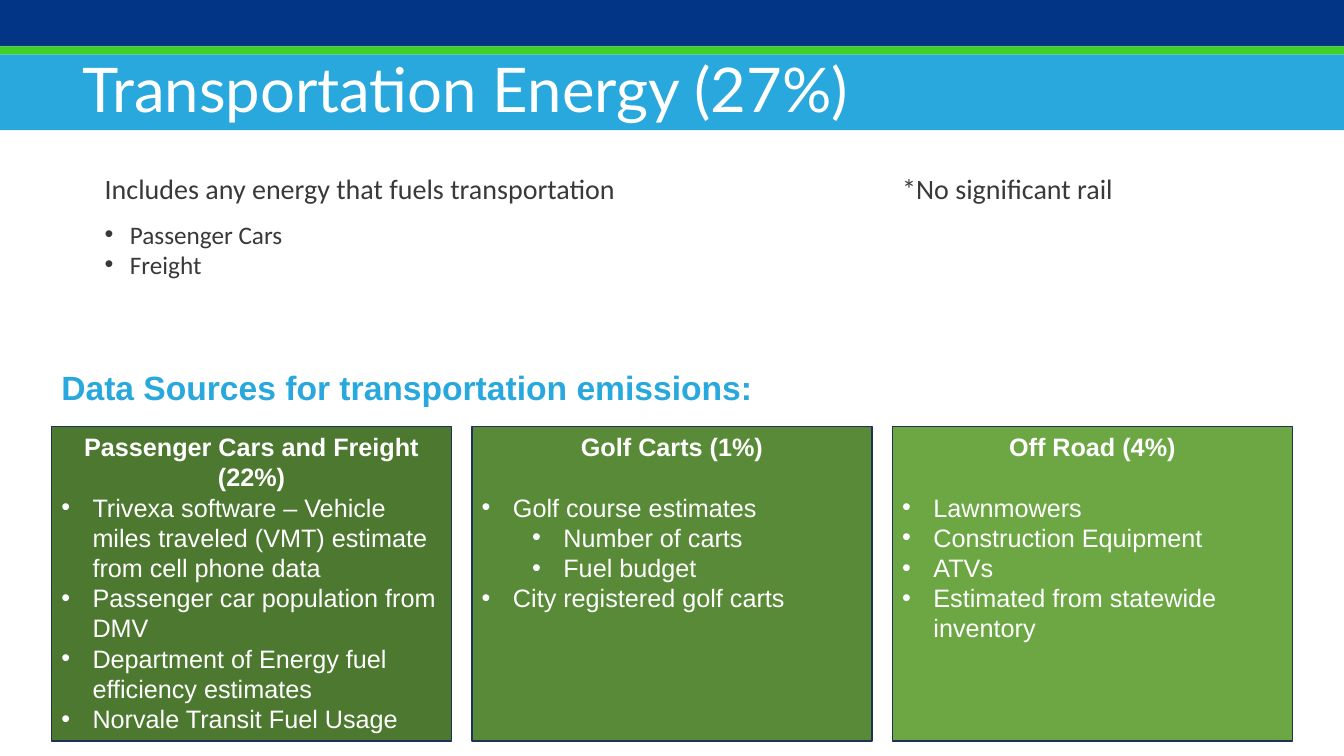
from dataclasses import dataclass

from lxml import etree
from pptx import Presentation
from pptx import util as u
from pptx.dml import color
from pptx.enum import shapes, text
from pptx.oxml import ns

HUES = {
    "navy": "023586", "lime": "3ED128", "sky": "28A8DD", "edge": "1E3256",
    "moss": "4C782F", "fern": "598A37", "leaf": "6CA744",
    "ink": "3B3838", "white": "FFFFFF",
}


@dataclass
class Line:
    words: str
    size: float = 18
    font: str = "Arial"
    hue: str = "white"
    bold: bool = False
    level: int = 0
    indent: float = 0
    center: bool = False
    before: float = 0
    after: float = 0


@dataclass
class Box:
    left: float
    top: float
    width: float
    height: float


@dataclass
class Card:
    hue: str
    title: str
    gap: float
    items: list[tuple[int, str]]


def tint(name: str) -> color.RGBColor:
    return color.RGBColor.from_string(HUES[name])


def place(box: Box) -> list[u.Length]:
    return [u.Inches(n) for n in (box.left, box.top, box.width, box.height)]


def write(frame, lines: list[Line]) -> None:
    frame.word_wrap = True
    frame.vertical_anchor = text.MSO_ANCHOR.TOP
    for i, line in enumerate(lines):
        para = frame.add_paragraph() if i else frame.paragraphs[0]
        para.text = line.words
        para.level = line.level
        para.alignment = text.PP_ALIGN.CENTER if line.center else text.PP_ALIGN.LEFT
        para.space_before = u.Pt(line.before)
        para.space_after = u.Pt(line.after)
        font = para.font
        font.size, font.name, font.bold = u.Pt(line.size), line.font, line.bold
        font.color.rgb = tint(line.hue)
        if line.indent:
            props = para._p.get_or_add_pPr()
            props.set("marL", str(u.Inches(line.indent + line.level * 0.5)))
            props.set("indent", str(-u.Inches(line.indent)))
            face = etree.Element(ns.qn("a:buFont"), typeface="Arial")
            mark = etree.Element(ns.qn("a:buChar"), char="•")
            spot = props.find(ns.qn("a:defRPr"))
            spot.addprevious(face)
            spot.addprevious(mark)


def label(slide, box: Box, lines: list[Line]) -> None:
    write(slide.shapes.add_textbox(*place(box)).text_frame, lines)


def block(slide, box: Box, hue: str, edge: str = ""):
    shape = slide.shapes.add_shape(shapes.MSO_SHAPE.RECTANGLE, *place(box))
    shape.shadow.inherit = False
    shape.fill.solid()
    shape.fill.fore_color.rgb = tint(hue)
    if edge:
        shape.line.color.rgb = tint(edge)
        shape.line.width = u.Pt(1)
    else:
        shape.line.fill.background()
    return shape


CARDS = [
    Card("moss", "Passenger Cars and Freight (22%)", 0, [
        (0, "Trivexa software – Vehicle miles traveled (VMT) estimate from cell phone data"),
        (0, "Passenger car population from DMV"),
        (0, "Department of Energy fuel efficiency estimates"),
        (0, "Norvale Transit Fuel Usage"),
    ]),
    Card("fern", "Golf Carts (1%)", 21.6, [
        (0, "Golf course estimates"),
        (1, "Number of carts"),
        (1, "Fuel budget"),
        (0, "City registered golf carts"),
    ]),
    Card("leaf", "Off Road (4%)", 21.6, [
        (0, "Lawnmowers"),
        (0, "Construction Equipment"),
        (0, "ATVs"),
        (0, "Estimated from statewide inventory"),
    ]),
]

BANDS = [
    (Box(0, 0.54, 13.33, 0.75), "sky"),
    (Box(0, 0, 13.33, 0.46), "navy"),
    (Box(0, 0.46, 13.33, 0.08), "lime"),
]


def lead(words: str, size: float = 20, font: str = "Calibri",
         hue: str = "ink", bold: bool = False) -> Line:
    return Line(words, size, font, hue, bold, before=10, after=10)


def main() -> None:
    deck = Presentation()
    deck.slide_width, deck.slide_height = u.Inches(13.33), u.Inches(7.5)
    slide = deck.slides.add_slide(deck.slide_layouts[6])

    modes = [Line(words, font="Calibri", hue="ink", indent=0.25)
             for words in ("Passenger Cars", "Freight")]
    label(slide, Box(0.94, 1.65, 7.27, 2.1),
          [lead("Includes any energy that fuels transportation"), *modes])

    for i, card in enumerate(CARDS):
        shape = block(slide, Box(0.51 + i * 4.17, 4.23, 3.97, 3.12), card.hue, "edge")
        head = Line(card.title, bold=True, center=True, after=card.gap)
        items = [Line(words, level=level, indent=0.31)
                 for level, words in card.items]
        write(shape.text_frame, [head, *items])

    label(slide, Box(8.85, 1.65, 3.37, 1.81), [lead("*No significant rail")])
    label(slide, Box(0.51, 3.59, 11.82, 0.52),
          [lead("Data Sources for transportation emissions:", 24, "Arial", "sky", True)])

    for box, hue in BANDS:
        block(slide, box, hue)
    label(slide, Box(0.72, 0.46, 12.04, 0.84),
          [Line("Transportation Energy (27%)", 44, "Lato")])

    deck.save("out.pptx")


if __name__ == "__main__":
    main()
